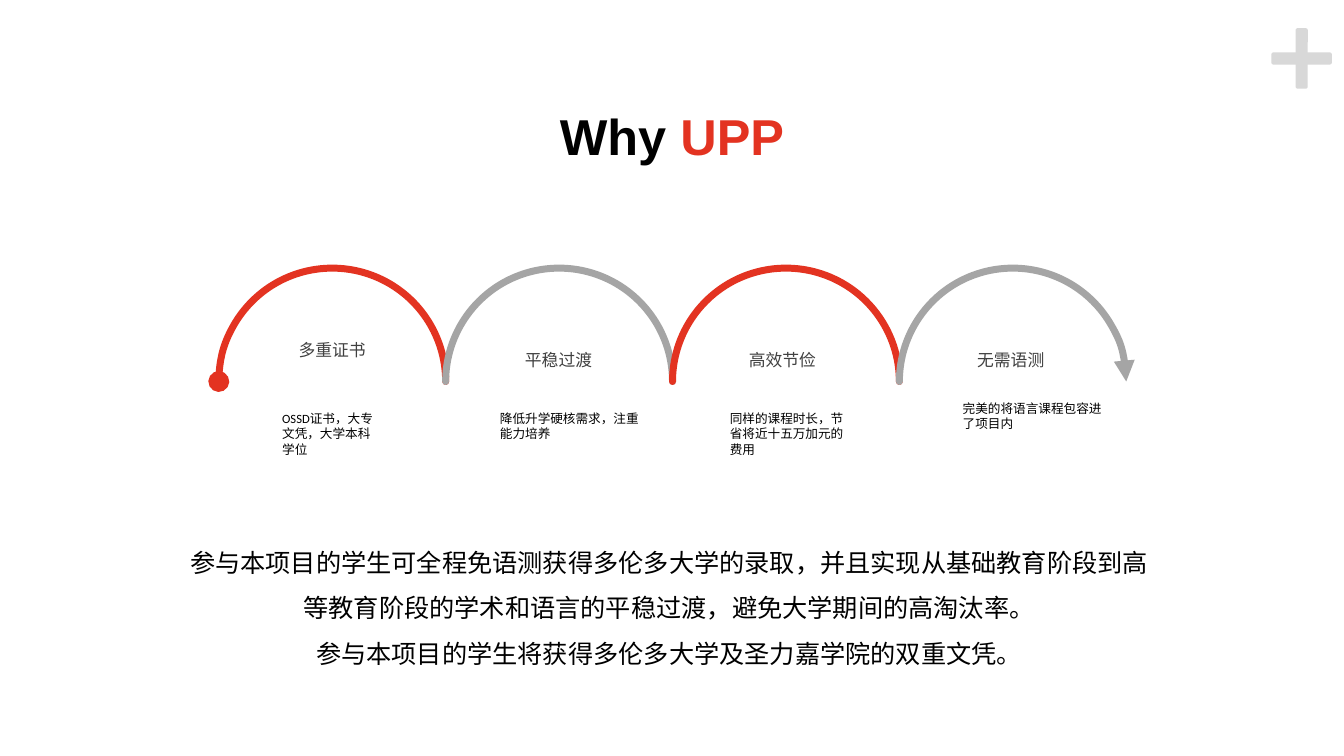
from lxml import etree
from pptx import Presentation
from pptx.dml.color import RGBColor
from pptx.enum.shapes import MSO_SHAPE
from pptx.enum.text import MSO_AUTO_SIZE, PP_ALIGN
from pptx.oxml.ns import qn
from pptx.util import Inches, Pt

ARC = MSO_SHAPE.ARC
BAR = MSO_SHAPE.ROUNDED_RECTANGLE
GROW = MSO_AUTO_SIZE.SHAPE_TO_FIT_TEXT
LEFT, CENTER = PP_ALIGN.LEFT, PP_ALIGN.CENTER

COLORS = {
    "red": "E33321",
    "gray": "A5A5A5",
    "plus": "D8D8D8",
    "label": "404040",
    "black": "000000",
}

ARC_LEFT, ARC_TOP, ARC_SIZE = 2.17, 2.66, 2.25

ARCS = [("red", "headEnd", "oval"), ("gray", None, None),
        ("red", None, None), ("gray", "tailEnd", "triangle")]

BENEFITS = [
    ("多重证书", (2.53, 3.32, 1.53, 0.3),
     "OSSD证书，大专文凭，大学本科学位", (2.7, 4.03, 1.18, 0.56)),
    ("平稳过渡", (5.1, 3.42, 0.88, 0.3),
     "降低升学硬核需求，注重能力培养", (4.86, 4.03, 1.59, 0.4)),
    ("高效节俭", (7.32, 3.42, 0.88, 0.3),
     "同样的课程时长，节省将近十五万加元的费用", (7.14, 4.03, 1.37, 0.56)),
    ("无需语测", (9.58, 3.42, 0.89, 0.3),
     "完美的将语言课程包容进了项目内", (9.45, 3.93, 1.59, 0.4)),
]

SUMMARY = [
    "参与本项目的学生可全程免语测获得多伦多大学的录取，并且实现从基础教育阶段到高等教育阶段的"
    "学术和语言的平稳过渡，避免大学期间的高淘汰率。",
    "参与本项目的学生将获得多伦多大学及圣力嘉学院的双重文凭。",
]


def rgb(name):
    """Return the named colour."""
    return RGBColor.from_string(COLORS[name])


def add_arc(slide, left, color, end, marker):
    """Draw one half-circle arc with round caps and an optional end marker."""
    arc = slide.shapes.add_shape(ARC, Inches(left), Inches(ARC_TOP),
                                 Inches(ARC_SIZE), Inches(ARC_SIZE))
    arc.shadow.inherit = False
    arc.adjustments[0] = 108
    arc.adjustments[1] = 0
    arc.fill.background()
    arc.line.color.rgb = rgb(color)
    arc.line.width = Pt(5)
    outline = arc.element.spPr.find(qn("a:ln"))
    outline.set("cap", "rnd")
    if end:
        etree.SubElement(outline, qn(f"a:{end}"), type=marker)


def add_text(slide, box, paragraphs, size, color, font="Arial", align=CENTER,
             wrap=True, bold=False, spacing=None):
    """Add a text box whose paragraphs are lists of (text, colour) runs or strings."""
    frame = slide.shapes.add_textbox(*map(Inches, box)).text_frame
    frame.word_wrap = wrap
    frame.auto_size = GROW
    for index, runs in enumerate(paragraphs):
        paragraph = frame.add_paragraph() if index else frame.paragraphs[0]
        paragraph.alignment = align
        if spacing:
            paragraph.line_spacing = spacing
        paragraph.font.name = font
        paragraph.font.size = Pt(size)
        paragraph.font.bold = bold
        for words, tint in [(runs, color)] if isinstance(runs, str) else runs:
            run = paragraph.add_run()
            run.text = words
            run.font.color.rgb = rgb(tint)


def add_plus(slide):
    """Draw the corner plus sign from two crossed bars."""
    for rotation in (0, 90):
        bar = slide.shapes.add_shape(BAR, Inches(12.61), Inches(0.52),
                                     Inches(0.6), Inches(0.12))
        bar.shadow.inherit = False
        bar.rotation = rotation
        bar.fill.solid()
        bar.fill.fore_color.rgb = rgb("plus")
        bar.line.fill.background()


def main():
    """Build and save the slide."""
    deck = Presentation()
    deck.slide_width, deck.slide_height = Inches(13.33), Inches(7.5)
    slide = deck.slides.add_slide(deck.slide_layouts[6])

    for index, (color, end, marker) in enumerate(ARCS):
        add_arc(slide, ARC_LEFT + index * ARC_SIZE, color, end, marker)
    for label, label_box, detail, detail_box in BENEFITS:
        add_text(slide, label_box, [label], 12, "label")
        add_text(slide, detail_box, [detail], 9, "black", "Calibri", LEFT)

    add_text(slide, (1.74, 5.23, 9.79, 1.42), SUMMARY, 18, "black", spacing=1.5)
    add_text(slide, (5.45, 0.99, 2.43, 0.71), [[("Why ", "black"), ("UPP", "red")]],
             36, "black", wrap=False, bold=True)
    add_plus(slide)
    deck.save("out.pptx")


if __name__ == "__main__":
    main()
